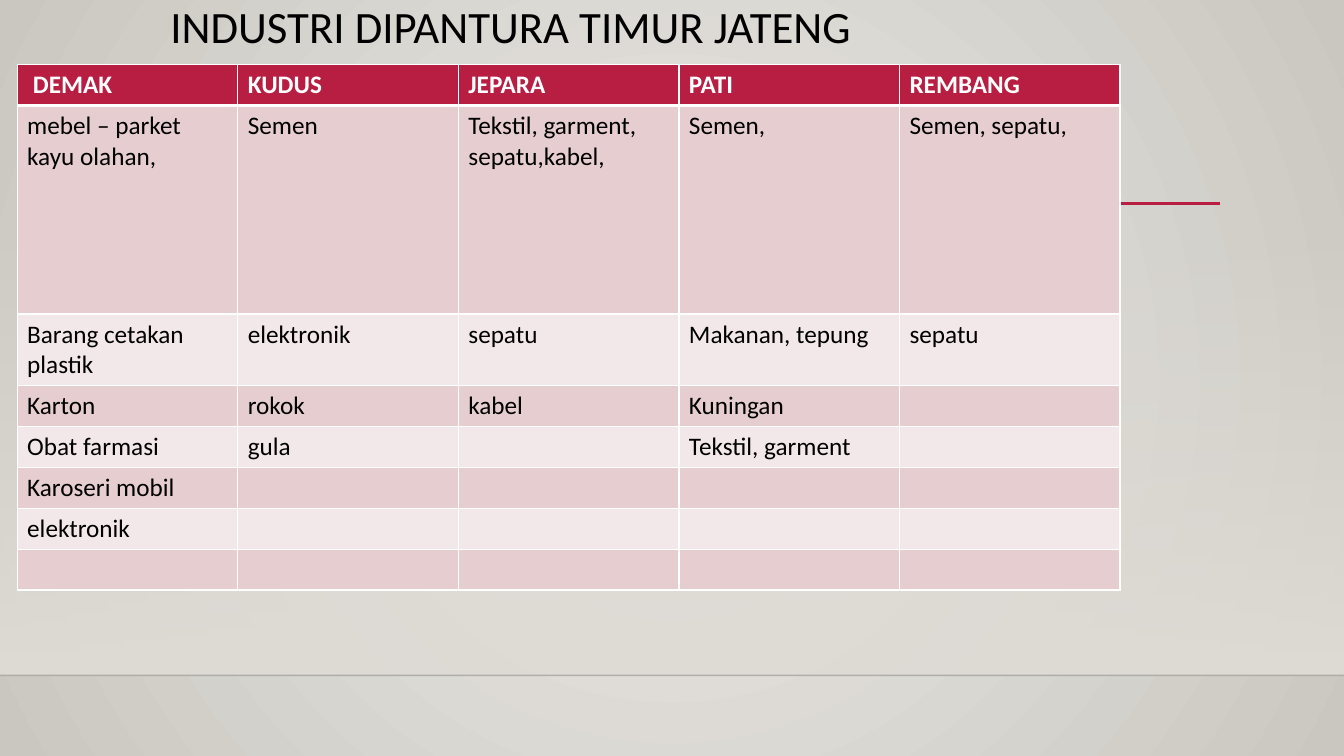
"""Build a slide with a table of industries in the eastern north coast of Central Java."""
from lxml.etree import SubElement
from pptx import Presentation
from pptx.dml.color import RGBColor
from pptx.enum.shapes import MSO_CONNECTOR, MSO_SHAPE
from pptx.enum.text import MSO_ANCHOR, PP_ALIGN
from pptx.oxml.ns import qn
from pptx.util import Inches, Pt

FONT = "Calibri"
BLACK = RGBColor(0x00, 0x00, 0x00)
WHITE = RGBColor(0xFF, 0xFF, 0xFF)
CRIMSON = RGBColor(0xB7, 0x1E, 0x42)
PINK = RGBColor(0xE6, 0xCD, 0xCF)
PALE_PINK = RGBColor(0xF3, 0xE8, 0xE9)
BG_CENTRE = RGBColor(0xEC, 0xEA, 0xE7)
BG_EDGE = RGBColor(0xCA, 0xC7, 0xC1)
FLOOR = RGBColor(0xDF, 0xDB, 0xD5)
FLOOR_EDGE = RGBColor(0x00, 0x00, 0x01)

ROWS = [
    [" DEMAK", "KUDUS", "JEPARA", "PATI", "REMBANG"],
    ["mebel – parket kayu olahan,", "Semen", "Tekstil, garment, sepatu,kabel,",
     "Semen,", "Semen, sepatu,"],
    ["Barang cetakan plastik", "elektronik", "sepatu", "Makanan, tepung", "sepatu"],
    ["Karton", "rokok", "kabel", "Kuningan", ""],
    ["Obat farmasi", "gula", "", "Tekstil, garment", ""],
    ["Karoseri mobil", "", "", "", ""],
    ["elektronik", "", "", "", ""],
    ["", "", "", "", ""],
]
HEADER_HEIGHT, TALL_HEIGHT = 0.38, 2.07


def set_alpha(color_el, percent):
    SubElement(color_el, qn("a:alpha"), val=str(percent * 1000))


def set_gradient(fill, first, last):
    fill.gradient()
    for stop, color in zip(fill.gradient_stops, (first, last)):
        stop.color.rgb = color


def set_background(s):
    set_gradient(s.background.fill, BG_CENTRE, BG_EDGE)
    grad = s._element.find(".//" + qn("a:gradFill"))
    grad.remove(grad.find(qn("a:lin")))
    path = SubElement(grad, qn("a:path"), path="circle")
    SubElement(path, qn("a:fillToRect"), l="50000", t="50000", r="50000", b="50000")


def add_floor(s):
    sp = s.shapes.add_shape(MSO_SHAPE.RECTANGLE, 0, Inches(2.21), Inches(13.33), Inches(4.49))
    sp.shadow.inherit = False
    sp.line.fill.background()
    set_gradient(sp.fill, FLOOR, FLOOR)
    sp.fill.gradient_angle = 270
    set_alpha(sp._element.find(".//" + qn("a:srgbClr")), 0)


def add_rule(s, left, right, y, color, width, alpha=100):
    line = s.shapes.add_connector(MSO_CONNECTOR.STRAIGHT, Inches(left), Inches(y),
                                  Inches(right), Inches(y))
    line.line.color.rgb = color
    line.line.width = Pt(width)
    if alpha < 100:
        set_alpha(line._element.find(".//" + qn("a:srgbClr")), alpha)
    SubElement(line._element.spPr, qn("a:effectLst"))


def add_run(p, text, size, color, bold=False):
    r = p.add_run()
    r.text = text
    r.font.name = FONT
    r.font.size = Pt(size)
    r.font.bold = bold
    r.font.color.rgb = color


def set_borders(cell, top, bottom):
    tc_pr = cell._tc.get_or_add_tcPr()
    for side, width in (("L", 1), ("R", 1), ("T", top), ("B", bottom)):
        ln = SubElement(tc_pr, qn("a:ln" + side), w=str(Pt(width)))
        solid = SubElement(ln, qn("a:solidFill"))
        SubElement(solid, qn("a:srgbClr"), val=str(WHITE))


def fill_cell(cell, text, row):
    header = row == 0
    set_borders(cell, 3 if row == 1 else 1, 3 if header else 1)
    cell.fill.solid()
    cell.fill.fore_color.rgb = CRIMSON if header else PINK if row % 2 else PALE_PINK
    if text:
        add_run(cell.text_frame.paragraphs[0], text, 18, WHITE if header else BLACK, header)


def add_industry_table(s):
    frame = s.shapes.add_table(len(ROWS), len(ROWS[0]), Inches(0.17), Inches(0.64),
                               Inches(10.94), Inches(HEADER_HEIGHT * 7 + TALL_HEIGHT))
    table = frame.table
    for i, texts in enumerate(ROWS):
        table.rows[i].height = Inches(TALL_HEIGHT if i == 1 else HEADER_HEIGHT)
        for j, text in enumerate(texts):
            fill_cell(table.cell(i, j), text, i)


def set_title(s, text):
    title = s.shapes.title
    title.left, title.top = Inches(1.59), Inches(0)
    title.width, title.height = Inches(10.5), Inches(0.87)
    tf = title.text_frame
    tf.word_wrap = True
    tf.vertical_anchor = MSO_ANCHOR.TOP
    p = tf.paragraphs[0]
    p.alignment = PP_ALIGN.LEFT
    p.line_spacing = 0.9
    add_run(p, text, 32, BLACK)
    s.shapes._spTree.append(title._element)


def main():
    prs = Presentation()
    prs.slide_width, prs.slide_height = Inches(13.33), Inches(7.5)
    s = prs.slides.add_slide(prs.slide_layouts[5])
    set_background(s)
    add_floor(s)
    add_rule(s, 0, 13.33, 6.7, FLOOR_EDGE, 1, alpha=20)
    add_rule(s, 1.59, 12.1, 2.02, CRIMSON, 2.5)
    add_industry_table(s)
    set_title(s, "INDUSTRI DIPANTURA TIMUR JATENG")
    prs.save("out.pptx")


if __name__ == "__main__":
    main()
